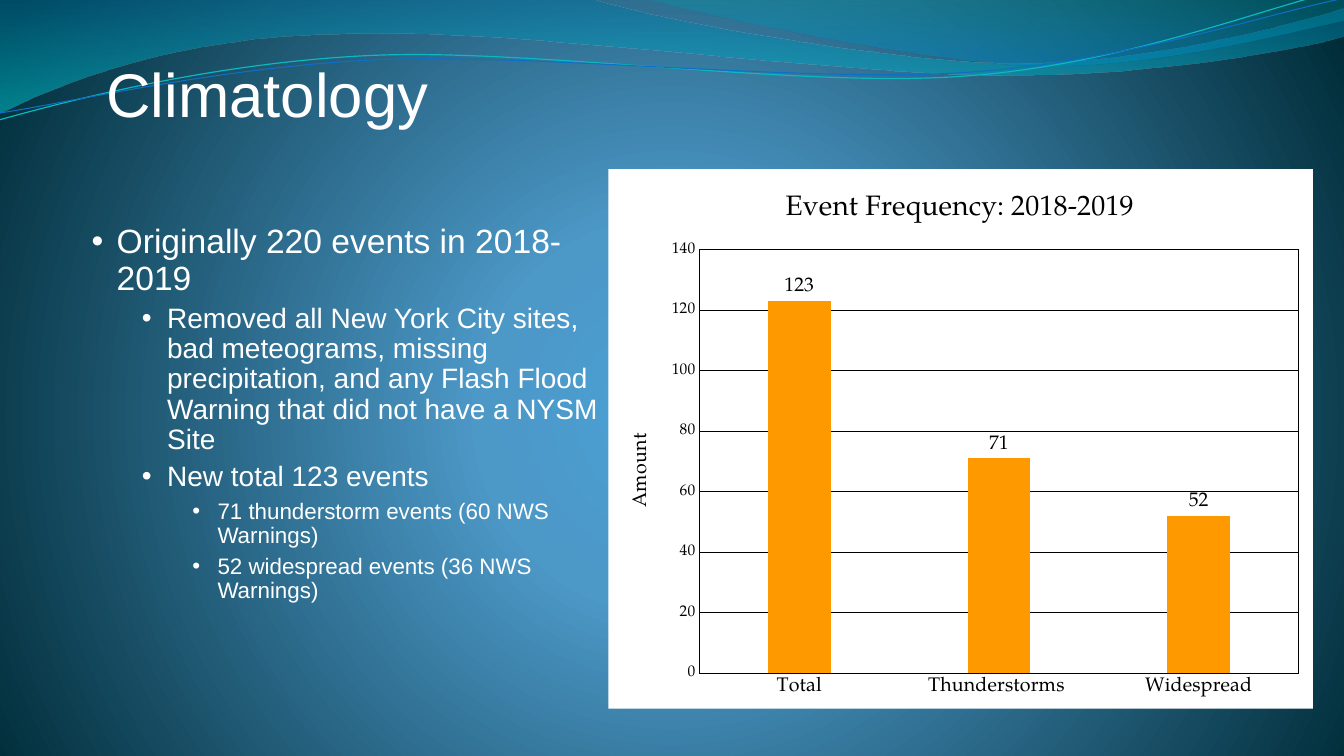
import math

from lxml import etree
from pptx import Presentation
from pptx.chart import data
from pptx.dml.color import RGBColor
from pptx.enum import chart as ch
from pptx.oxml import parse_xml
from pptx.oxml.ns import nsdecls, qn
from pptx.util import Pt

SANS, SERIF = "Arial", "TeX Gyre Pagella"
WHITE, BLACK, ORANGE = "FFFFFF", "000000", "FF9900"

# Wave outlines in points: a pair is a line, six numbers are a Bezier curve
WIDE_WAVE = [(0, 0), (422.6, -0.7), (456.5, 12.2, 637.2, 45.4, 727.9, 45.4),
             (819.4, 45.4, 920.2, 18.7, 959.8, 6.5), (961.2, 25.9),
             (943.9, 31.7, 835.2, 54.7, 715.7, 54),
             (596.9, 54, 366.5, 20.2, 247, 24.5),
             (123.8, 25.9, 43.9, 59.8, -0.7, 81.4), (0, 0)]
RIGHT_WAVE = [(460.1, -0.7), (488.9, 7.9, 654.5, 44.6, 738, 46.8),
              (821.5, 49.7, 923, 23, 959.8, 15.1), (959.8, 0), (460.1, -0.7)]
TEAL_LINE = [(-0.7, 85.7), (46.1, 72.7, 151.9, 44.6, 265.7, 39.6),
             (379.4, 34.6, 568.8, 62.6, 684, 54.7),
             (799.2, 47.5, 901.4, 5.8, 958.3, -7.2)]
BLUE_LINE = [(0, 80.6), (45.4, 74.2, 157, 47.5, 272.2, 42.5),
             (386.6, 38.2, 573.1, 59, 687.6, 51.8),
             (802.8, 44.6, 903.6, 10.1, 960.5, -1.4)]
TILT = -2.7
TILT_CENTER = (479, 42)

BULLETS = [
    (0, "Originally 220 events in 2018-2019"),
    (1, "Removed all New York City sites, bad meteograms, missing precipitation, "
        "and any Flash Flood Warning that did not have a NYSM Site"),
    (1, "New total 123 events"),
    (2, "71 thunderstorm events (60 NWS Warnings)"),
    (2, "52 widespread events (36 NWS Warnings)"),
]


def color(hex_value):
    return RGBColor.from_string(hex_value)


def set_font(font, size, hex_value, name):
    font.size, font.name, font.bold = Pt(size), name, False
    font.color.rgb = color(hex_value)


def set_line(line, hex_value, width):
    line.color.rgb = color(hex_value)
    line.width = Pt(width)


def set_gradient(owner, fill, stops, direction):
    """Fill with (position %, colour, opacity %) stops."""
    fill.solid()
    gs = "".join(f'<a:gs pos="{pos * 1000}"><a:srgbClr val="{c}">'
                 f'<a:alpha val="{alpha * 1000}"/></a:srgbClr></a:gs>'
                 for pos, c, alpha in stops)
    grad = parse_xml(f'<a:gradFill {nsdecls("a")} rotWithShape="1">'
                     f'<a:gsLst>{gs}</a:gsLst>{direction}</a:gradFill>')
    solid = owner.xpath(".//a:solidFill")[0]
    solid.getparent().replace(solid, grad)


def turn(x, y, degrees):
    cx, cy = TILT_CENTER
    c, s = math.cos(math.radians(degrees)), math.sin(math.radians(degrees))
    return (cx + (x - cx) * c - (y - cy) * s, cy + (x - cx) * s + (y - cy) * c)


def add_curve(slide, outline, close=False, tilt=0):
    # Points of each part, laid level before the shape is tilted
    parts = [[tuple(map(Pt, turn(*pair, -tilt))) for pair in zip(part[::2], part[1::2])]
             for part in outline]
    ends = [part[-1] for part in parts]
    builder = slide.shapes.build_freeform(*ends[0])
    builder.add_line_segments(ends[1:], close=close)
    sp = builder.convert_to_shape()
    # Turn the three-point parts into Bezier segments
    for segment, part in zip(sp.element.xpath(".//a:lnTo"), parts[1:]):
        if len(part) == 3:
            pts = "".join(f'<a:pt x="{x - sp.left}" y="{y - sp.top}"/>' for x, y in part)
            curve = parse_xml(f'<a:cubicBezTo {nsdecls("a")}>{pts}</a:cubicBezTo>')
            segment.getparent().replace(segment, curve)
    sp.rotation = tilt
    sp.shadow.inherit = False
    return sp


def add_backdrop(slide):
    # Radial background
    bg = slide.background
    set_gradient(bg.element, bg.fill,
                 [(0, "4AA0D6", 100), (25, "4C98C7", 100), (100, "002C38", 100)],
                 '<a:path path="circle"><a:fillToRect l="10000" t="110000" '
                 'r="10000" b="100000"/></a:path>')
    # Translucent waves
    for outline, stops in [
            (WIDE_WAVE, [(0, "0074A1", 45), (100, "00C6CF", 55)]),
            (RIGHT_WAVE, [(0, "00A1A9", 30), (80, "008BBF", 45)])]:
        sp = add_curve(slide, outline, close=True)
        set_gradient(sp.element, sp.fill, stops, '<a:lin ang="5400000" scaled="1"/>')
        sp.line.fill.background()
    # Thin wave lines
    for outline, hex_value, width in [(TEAL_LINE, "0AB8BF", 0.85),
                                      (BLUE_LINE, "0F6FC6", 0.75)]:
        sp = add_curve(slide, outline, tilt=TILT)
        sp.fill.background()
        set_line(sp.line, hex_value, width)


def add_text(slide, box):
    tf = slide.shapes.add_textbox(*map(Pt, box)).text_frame
    tf.word_wrap = True
    return tf


def add_title(slide, box):
    p = add_text(slide, box).paragraphs[0]
    p.text = "Climatology"
    p.line_spacing = 0.9
    set_font(p.runs[0].font, 44, WHITE, SANS)


def add_bullets(slide, box):
    tf = add_text(slide, box)
    for i, (level, line) in enumerate(BULLETS):
        p = tf.paragraphs[0] if i == 0 else tf.add_paragraph()
        p.text = line
        p.level = level
        pPr = p._p.get_or_add_pPr()
        pPr.set("marL", str(Pt(18 + 36 * level)))
        pPr.set("indent", str(-Pt(18)))
        etree.SubElement(pPr, qn("a:buFont")).set("typeface", SANS)
        etree.SubElement(pPr, qn("a:buChar")).set("char", "•")
        p.line_spacing = 0.9
        if i:
            p.space_before = Pt(5)
        set_font(p.runs[0].font, 24 - 4 * level, WHITE, SANS)


def set_layout(element, index, box, place):
    """Place a chart part at (x, y[, w, h]) points inside the chart's box."""
    for old in element.findall(qn("c:layout")):
        element.remove(old)
    inner = '<c:layoutTarget val="inner"/>' if len(place) == 4 else ""
    modes = "".join(f'<c:{k}Mode val="edge"/>' for k in "xy")
    sizes = "".join(f'<c:{k} val="{v / whole:.4f}"/>'
                    for k, v, whole in zip("xywh", place, box[2:] * 2))
    element.insert(index, parse_xml(
        f'<c:layout {nsdecls("c")}><c:manualLayout>{inner}{modes}{sizes}'
        '</c:manualLayout></c:layout>'))


def area_format(line):
    return parse_xml(f'<c:spPr {nsdecls("c", "a")}><a:solidFill><a:srgbClr val="{WHITE}"/>'
                     f'</a:solidFill>{line}</c:spPr>')


def add_title_text(title, content, size, box, place):
    title.text_frame.text = content
    set_font(title.text_frame.paragraphs[0].runs[0].font, size, BLACK, SERIF)
    set_layout(title.element, 1, box, place)


def add_event_chart(slide, box):
    cd = data.CategoryChartData()
    cd.categories = ["Total", "Thunderstorms ", "Widespread"]
    cd.add_series("Series 1", [123, 71, 52])
    chart = slide.shapes.add_chart(ch.XL_CHART_TYPE.COLUMN_CLUSTERED,
                                   *map(Pt, box), cd).chart
    set_font(chart.font, 10, WHITE, SERIF)
    chart.has_legend = False
    chart.has_title = True
    add_title_text(chart.chart_title, "Event Frequency: 2018-2019", 20, box, (123, 11.8))

    # Chart and plot areas
    chart.element.find(qn("c:chart")).addnext(area_format("<a:ln><a:noFill/></a:ln>"))
    plot_area = chart.element.xpath("c:chart/c:plotArea")[0]
    set_layout(plot_area, 0, box, (65, 57.6, 428, 302.5))
    plot_area.append(area_format(f'<a:ln w="{Pt(0.75)}"><a:solidFill>'
                                 f'<a:srgbClr val="{BLACK}"/></a:solidFill></a:ln>'))

    # Axes
    for axis, size in [(chart.category_axis, 14), (chart.value_axis, 11)]:
        axis.major_tick_mark = axis.minor_tick_mark = ch.XL_TICK_MARK.NONE
        set_font(axis.tick_labels.font, size, BLACK, SERIF)
    set_line(chart.category_axis.format.line, BLACK, 0.75)
    va = chart.value_axis
    va.minimum_scale, va.maximum_scale, va.major_unit = 0, 140, 20
    va.format.line.fill.background()
    set_line(va.major_gridlines.format.line, BLACK, 0.75)
    va.has_title = True
    add_title_text(va.axis_title, "Amount", 14, box, (12.2, 186.2))
    va.axis_title.element.xpath(".//a:bodyPr")[0].set("rot", "-5400000")

    # Columns and their labels
    plot = chart.plots[0]
    plot.gap_width, plot.overlap, plot.vary_by_categories = 219, -27, False
    fill = plot.series[0].format.fill
    fill.solid()
    fill.fore_color.rgb = color(ORANGE)
    labels = plot.series[0].data_labels
    labels.show_value = True
    labels.position = ch.XL_LABEL_POSITION.OUTSIDE_END
    set_font(labels.font, 14, BLACK, SERIF)


def main():
    prs = Presentation()
    prs.slide_width, prs.slide_height = Pt(960), Pt(540)
    slide = prs.slides.add_slide(prs.slide_layouts[6])
    add_backdrop(slide)
    add_title(slide, (69, 42.5, 828, 104.4))
    add_bullets(slide, (58.3, 157, 388, 327))
    add_event_chart(slide, (434.6, 120.8, 503.2, 385.3))
    prs.save("out.pptx")


if __name__ == "__main__":
    main()
